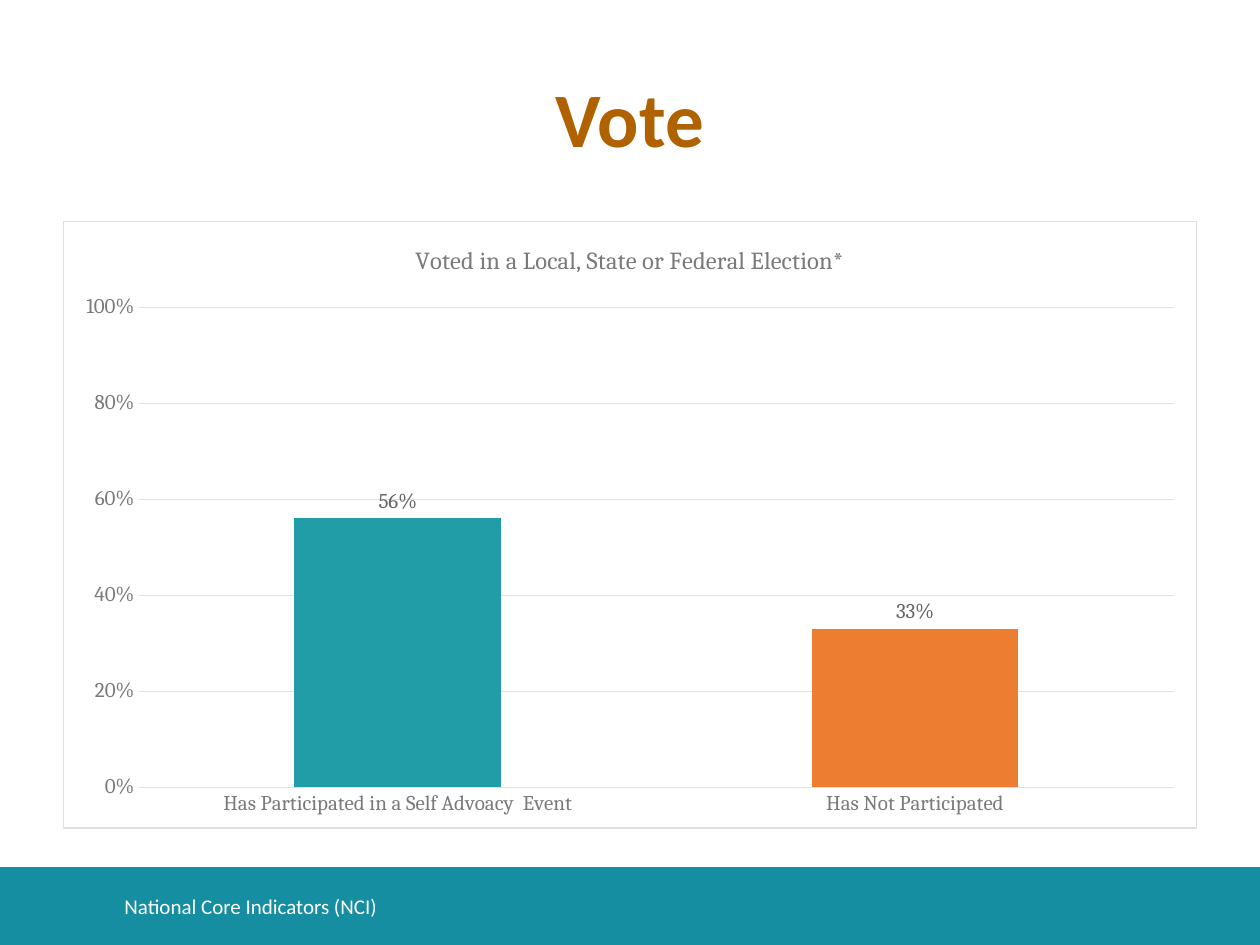
from lxml import etree
from pptx import Presentation
from pptx.chart.data import CategoryChartData
from pptx.dml.color import RGBColor
from pptx.enum.chart import XL_CHART_TYPE, XL_LABEL_POSITION, XL_TICK_MARK
from pptx.enum.shapes import MSO_SHAPE
from pptx.enum.text import MSO_ANCHOR, PP_ALIGN
from pptx.oxml import parse_xml
from pptx.oxml.ns import nsdecls, qn
from pptx.util import Pt

WHITE = RGBColor(0xFF, 0xFF, 0xFF)
BAND_TEAL = RGBColor(0x16, 0x8E, 0xA2)
TITLE_BROWN = RGBColor(0xB0, 0x61, 0x00)
BAR_TEAL = RGBColor(0x21, 0x9D, 0xA7)
BAR_ORANGE = RGBColor(0xED, 0x7D, 0x31)
AXIS_GREY = RGBColor(0x7A, 0x7A, 0x7A)
LABEL_GREY = RGBColor(0x66, 0x66, 0x66)
RULE_GREY = RGBColor(0xE0, 0xE0, 0xE0)

VOTERS = {
    "Has Participated in a Self Advoacy  Event": (0.56, BAR_TEAL),
    "Has Not Participated": (0.33, BAR_ORANGE),
}


def style_font(font, *, name, size, color, bold=False):
    font.name = name
    font.size = Pt(size)
    font.bold = bold
    font.color.rgb = color


def add_text(slide, text, left, top, width, height, *, align=PP_ALIGN.LEFT, **font_format):
    frame = slide.shapes.add_textbox(Pt(left), Pt(top), Pt(width), Pt(height)).text_frame
    frame.word_wrap = True
    frame.vertical_anchor = MSO_ANCHOR.MIDDLE
    paragraph = frame.paragraphs[0]
    paragraph.alignment = align
    run = paragraph.add_run()
    run.text = text
    style_font(run.font, **font_format)


def add_band(slide, left, top, width, height, color):
    band = slide.shapes.add_shape(MSO_SHAPE.RECTANGLE, Pt(left), Pt(top), Pt(width), Pt(height))
    band.shadow.inherit = False
    band.fill.solid()
    band.fill.fore_color.rgb = color
    band.line.fill.background()


def style_rule(line):
    line.color.rgb = RULE_GREY
    line.width = Pt(0.75)


def frame_chart(chart):
    """Give the chart area a white fill and a thin grey border."""
    area = parse_xml(
        f'<c:spPr {nsdecls("c", "a")}>'
        f'<a:solidFill><a:srgbClr val="{WHITE}"/></a:solidFill>'
        f'<a:ln w="{Pt(0.75)}"><a:solidFill><a:srgbClr val="{RULE_GREY}"/></a:solidFill></a:ln>'
        "</c:spPr>"
    )
    chart.element.find(qn("c:chart")).addnext(area)


def style_axes(chart):
    categories, shares = chart.category_axis, chart.value_axis
    for axis in (categories, shares):
        axis.major_tick_mark = axis.minor_tick_mark = XL_TICK_MARK.NONE
        style_font(axis.tick_labels.font, name="Cambria", size=12, color=AXIS_GREY)
    style_rule(categories.format.line)
    shares.format.line.fill.background()
    shares.minimum_scale, shares.maximum_scale, shares.major_unit = 0, 1, 0.2
    shares.tick_labels.number_format = "0%"
    shares.tick_labels.number_format_is_linked = False
    style_rule(shares.major_gridlines.format.line)


def style_bars(plot):
    plot.gap_width = 150
    plot.vary_by_categories = False
    bars = plot.series[0]
    bars.invert_if_negative = False
    bars.format.fill.solid()
    bars.format.fill.fore_color.rgb = BAR_TEAL
    for index, (_, color) in enumerate(VOTERS.values()):
        if color != BAR_TEAL:
            fill = bars.points[index].format.fill
            fill.solid()
            fill.fore_color.rgb = color
    labels = bars.data_labels
    labels.show_value = True
    labels.position = XL_LABEL_POSITION.OUTSIDE_END
    labels.number_format = "0%"
    labels.number_format_is_linked = False
    style_font(labels.font, name="Cambria", size=12, color=LABEL_GREY)


def add_vote_chart(slide, left, top, width, height):
    data = CategoryChartData(number_format="0%")
    data.categories = list(VOTERS)
    data.add_series("Series 1", [share for share, _ in VOTERS.values()])
    chart = slide.shapes.add_chart(
        XL_CHART_TYPE.COLUMN_CLUSTERED, Pt(left), Pt(top), Pt(width), Pt(height), data
    ).chart
    style_font(chart.font, name="Cambria", size=12, color=AXIS_GREY)
    chart.has_legend = False
    chart.has_title = True
    heading = chart.chart_title.text_frame.paragraphs[0].add_run()
    heading.text = "Voted in a Local, State or Federal Election*"
    style_font(heading.font, name="Cambria", size=14, color=AXIS_GREY)
    chart.chart_title.include_in_layout = False
    frame_chart(chart)
    style_axes(chart)
    style_bars(chart.plots[0])


def main():
    deck = Presentation()
    deck.slide_width, deck.slide_height = Pt(720), Pt(540)
    slide = deck.slides.add_slide(deck.slide_layouts[6])
    add_band(slide, 0, 495.5, 720, 44.5, BAND_TEAL)
    add_text(slide, "Vote", 36, 21.6, 648, 90, align=PP_ALIGN.CENTER,
             name="Calibri", size=44, color=TITLE_BROWN, bold=True)
    add_vote_chart(slide, 36, 126, 648, 347.5)
    add_text(slide, "National Core Indicators (NCI)", 64, 503.5, 533, 29,
             name="Calibri", size=12, color=WHITE)
    deck.save("out.pptx")


if __name__ == "__main__":
    main()
